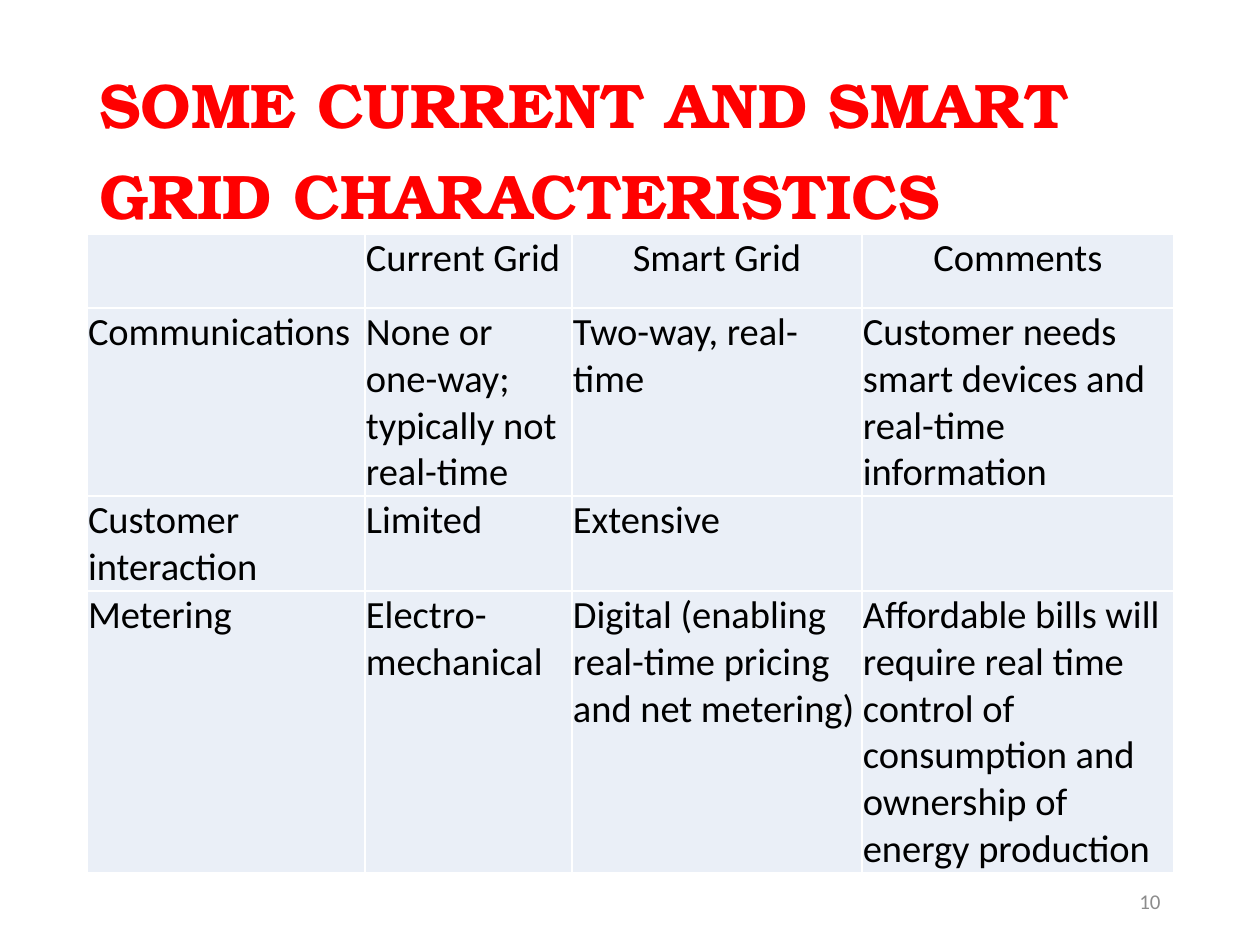
from lxml.etree import SubElement
from pptx import Presentation
from pptx.dml.color import RGBColor
from pptx.enum.text import MSO_ANCHOR, PP_ALIGN
from pptx.oxml.ns import qn
from pptx.util import Pt

PX = 914400 // 126
COLORS = {"title": "FF0000", "body": "000000", "number": "8C8C8C",
          "cell": "EAEFF7", "border": "FFFFFF"}
TITLE = {"name": "TeX Gyre Bonum", "size": Pt(36), "bold": True}
BODY = {"name": "Calibri", "size": Pt(22), "bold": False}
NUMBER = {"name": "Calibri", "size": Pt(12)}
CELL_MARGINS = {"margin_left": PX, "margin_right": PX, "margin_top": PX, "margin_bottom": 0}

COLUMN_WIDTHS = [278, 207, 290, 312]
ROW_HEIGHTS = [74, 188, 95, 282]
ROWS = [
    ["", "Current Grid", "Smart Grid", "Comments"],
    ["Communications", "None or one-way; typically not real-time", "Two-way, real-time",
     "Customer needs smart devices and real-time information"],
    ["Customer interaction", "Limited", "Extensive", ""],
    ["Metering", "Electro-mechanical", "Digital (enabling real-time pricing and net metering)",
     "Affordable bills will require real time control of consumption "
     "and ownership of energy production"],
]


def set_values(target, values):
    for name, value in values.items():
        setattr(target, name, value)


def write(frame, text, font, color, align=PP_ALIGN.LEFT):
    para = frame.paragraphs[0]
    para.alignment = align
    span = para.add_run()
    span.text = text
    set_values(span.font, font)
    span.font.color.rgb = RGBColor.from_string(COLORS[color])
    return para


def add_text(page, area, text, font, color, align=PP_ALIGN.LEFT):
    box = page.shapes.add_textbox(*(length * PX for length in area))
    set_values(box.text_frame, {"word_wrap": True, "vertical_anchor": MSO_ANCHOR.MIDDLE})
    return write(box.text_frame, text, font, color, align)


def add_borders(cell):
    """Draw all four cell edges; the schema wants them ahead of the fill."""
    properties = cell._tc.get_or_add_tcPr()
    for edge in ("a:lnL", "a:lnR", "a:lnT", "a:lnB"):
        line = SubElement(properties, qn(edge), w=str(Pt(1)))
        fill = SubElement(line, qn("a:solidFill"))
        SubElement(fill, qn("a:srgbClr"), val=COLORS["border"])


def add_grid_table(page, left, top):
    area = (left, top, sum(COLUMN_WIDTHS), sum(ROW_HEIGHTS))
    frame = page.shapes.add_table(len(ROWS), len(COLUMN_WIDTHS),
                                  *(length * PX for length in area))
    table = frame.table
    set_values(table, {"first_row": False, "horz_banding": False})
    for column, width in zip(table.columns, COLUMN_WIDTHS):
        column.width = width * PX
    for row, height in zip(table.rows, ROW_HEIGHTS):
        row.height = height * PX
    for row_index, texts in enumerate(ROWS):
        for column_index, text in enumerate(texts):
            cell = table.cell(row_index, column_index)
            set_values(cell, CELL_MARGINS)
            add_borders(cell)
            cell.fill.solid()
            cell.fill.fore_color.rgb = RGBColor.from_string(COLORS["cell"])
            centred = row_index == 0 and column_index > 1
            if text:
                write(cell.text_frame, text, BODY, "body",
                      PP_ALIGN.CENTER if centred else PP_ALIGN.LEFT)


def main():
    deck = Presentation()
    set_values(deck, {"slide_width": 1260 * PX, "slide_height": 945 * PX})
    page = deck.slides.add_slide(deck.slide_layouts[6])
    title = add_text(page, (87, 50, 1086, 183),
                     "SOME CURRENT AND SMART GRID CHARACTERISTICS", TITLE, "title")
    title.line_spacing = 1.2
    add_grid_table(page, 87, 234)
    add_text(page, (890, 876, 283, 50), "10", NUMBER, "number", PP_ALIGN.RIGHT)
    deck.save("out.pptx")


if __name__ == "__main__":
    main()
